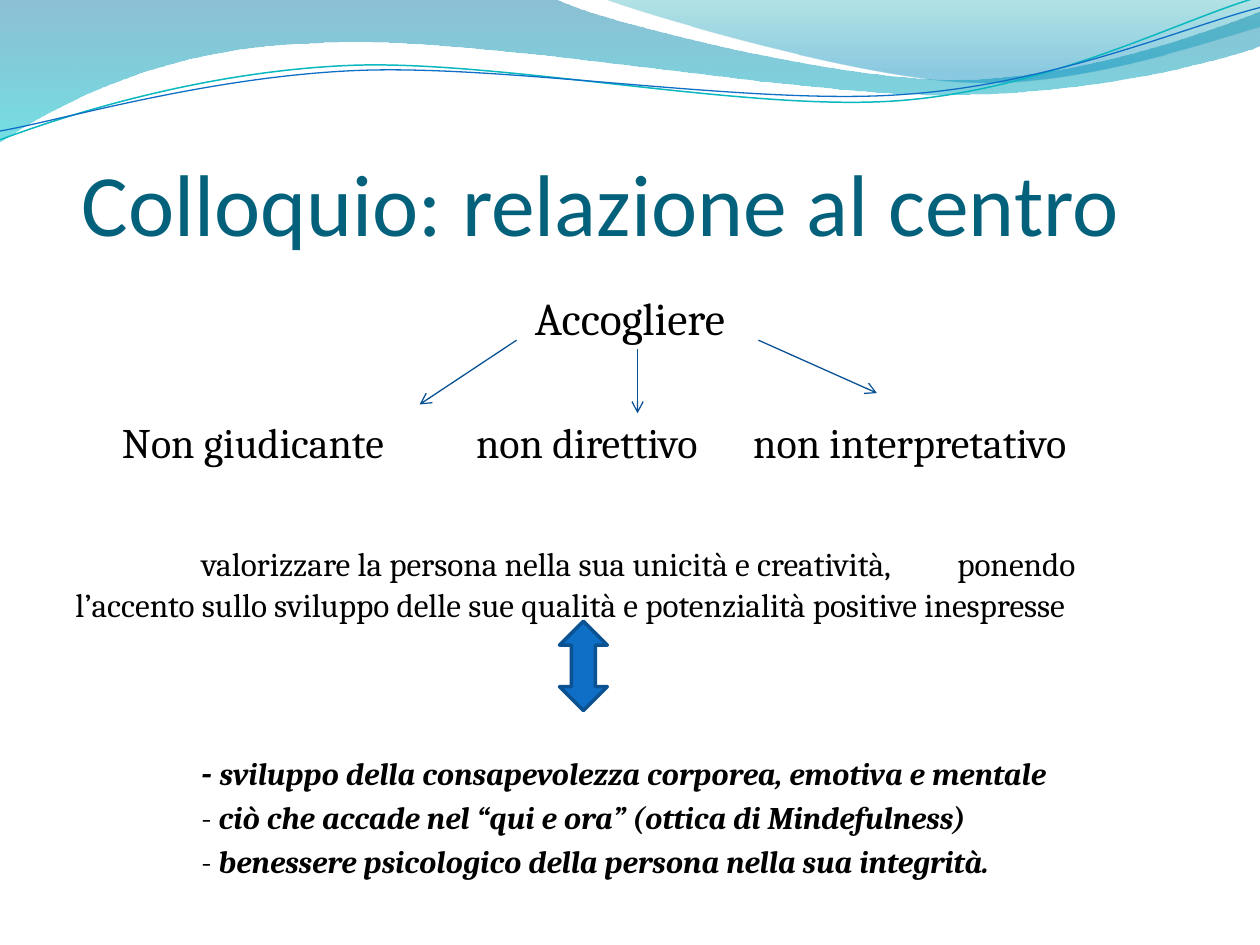
from lxml import etree
from pptx import Presentation
from pptx.dml.color import RGBColor
from pptx.enum.shapes import MSO_CONNECTOR, MSO_SHAPE
from pptx.enum.text import MSO_ANCHOR, MSO_AUTO_SIZE, PP_ALIGN
from pptx.oxml.ns import qn
from pptx.util import Inches, Pt

STRAIGHT, UP_DOWN = MSO_CONNECTOR.STRAIGHT, MSO_SHAPE.UP_DOWN_ARROW
BOTTOM, NO_FIT = MSO_ANCHOR.BOTTOM, MSO_AUTO_SIZE.NONE
LEFT, CENTER = PP_ALIGN.LEFT, PP_ALIGN.CENTER

BLACK = RGBColor(0x00, 0x00, 0x00)
TITLE_TEAL = RGBColor(0x04, 0x61, 0x7B)
BLUE = RGBColor(0x0F, 0x6F, 0xC6)
DARK_BLUE = RGBColor(0x0B, 0x52, 0x92)
ARROW_BLUE = RGBColor(0x09, 0x52, 0x95)
AQUA = RGBColor(0x0A, 0xB8, 0xBF)
DEEP_TEAL, CYAN = RGBColor(0x00, 0x74, 0xA1), RGBColor(0x00, 0xC6, 0xCF)
SEA, SKY = RGBColor(0x00, 0xA1, 0xA9), RGBColor(0x00, 0x8B, 0xBF)

# Content
TITLE = "Colloquio: relazione al centro"
# space before (pt), line spacing, alignment, tab stops (in), runs (text, size, bold italic)
BODY = [
    (0, 1, CENTER, [], [("Accogliere", 26, False)]),
    (41.2, 1, LEFT, [0.37, 3.18, 5.38],
     [("\tNon giudicante\tnon direttivo\tnon interpretativo", 24, False)]),
    (42.4, 1.05, LEFT, [1, 7],
     [("\tvalorizzare la persona nella sua unicità e creatività,\tponendo l’accento sullo "
       "sviluppo delle sue qualità e potenzialità positive inespresse", 19, False)]),
    (71.7, 1, LEFT, [1],
     [("\t- ", 20, True),
      ("sviluppo della consapevolezza corporea, emotiva e mentale", 18, True)]),
    (3.5, 1, LEFT, [1],
     [("\t- ", 18, False),
      ("ciò che accade nel “qui e ora” (ottica di Mindefulness)", 18, True)]),
    (3.5, 1, LEFT, [1],
     [("\t- ", 18, False),
      ("benessere psicologico della persona nella sua integrità.", 18, True)]),
]
ARROWS = [((6.02, 2.7), (6.96, 3.12)), ((4.1, 2.7), (3.33, 3.21)), ((5.06, 2.77), (5.06, 3.28))]

# Waves: a start point, then straight steps (2 numbers) and Bézier steps (6 numbers)
BANDS = [
    ([(0, 0), (4.4, -0.01), (4.76, 0.17, 6.64, 0.63, 7.58, 0.63),
      (8.53, 0.63, 9.58, 0.26, 10, 0.09), (10.01, 0.36),
      (9.83, 0.44, 8.7, 0.76, 7.46, 0.75), (6.22, 0.75, 3.82, 0.28, 2.57, 0.34),
      (1.29, 0.36, 0.46, 0.83, -0.01, 1.13)], [(DEEP_TEAL, 45), (CYAN, 55)], 1),
    ([(4.79, -0.01), (5.09, 0.11, 6.82, 0.62, 7.69, 0.65),
      (8.56, 0.69, 9.61, 0.32, 10, 0.21), (10, 0)], [(SEA, 30), (SKY, 45)], 0.8),
]
STRANDS = [
    ([(0, 1.11), (0.48, 0.93, 1.58, 0.57, 2.77, 0.52), (3.95, 0.47, 5.93, 0.89, 7.13, 0.8),
      (8.33, 0.71, 9.38, 0.15, 9.98, -0.02)], AQUA, 0.85),
    ([(0, 1.04), (0.47, 0.96, 1.64, 0.61, 2.83, 0.56), (4.03, 0.51, 5.97, 0.84, 7.17, 0.75),
      (8.36, 0.67, 9.41, 0.21, 10, 0.06)], BLUE, 0.75),
]


def add_wave(shapes, steps, close):
    """Build an outline through all points, then bend each Bézier step into a curve."""
    points = [(Inches(x), Inches(y))
              for step in steps for x, y in zip(step[::2], step[1::2])]
    builder = shapes.build_freeform(*points[0])
    builder.add_line_segments(points[1:], close=close)
    s = builder.convert_to_shape()
    s.shadow.inherit = False
    segments = iter(list(s._element.spPr.iter(qn("a:lnTo"))))
    for step in steps[1:]:
        group = [next(segments) for _ in range(len(step) // 2)]
        if len(group) == 3:
            curve = etree.Element(qn("a:cubicBezTo"))
            group[0].addprevious(curve)
            for segment in group:
                curve.append(segment[0])
                segment.getparent().remove(segment)
    return s


def add_run(p, text, font, size, color, emphasis=False):
    r = p.add_run()
    r.text = text
    r.font.name, r.font.size = font, Pt(size)
    r.font.color.rgb = color
    r.font.bold = r.font.italic = emphasis


def set_tabs(p, tabs):
    tab_list = etree.SubElement(p._p.get_or_add_pPr(), qn("a:tabLst"))
    for tab in tabs:
        etree.SubElement(tab_list, qn("a:tab"), pos=str(Inches(tab)), algn="l")


prs = Presentation()
prs.slide_width, prs.slide_height = Inches(10), Inches(7.5)
slide = prs.slides.add_slide(prs.slide_layouts[5])
shapes = slide.shapes

# Wave bands and strands across the top
for steps, stops, end in BANDS:
    s = add_wave(shapes, steps, True)
    s.line.fill.background()
    s.fill.gradient()
    s.fill.gradient_angle = 270
    for stop, (color, alpha), position in zip(s.fill.gradient_stops, stops, (0, end)):
        stop.color.rgb = color
        stop.position = position
    for node, (_, alpha) in zip(s._element.spPr.iter(qn("a:srgbClr")), stops):
        etree.SubElement(node, qn("a:alpha"), val=str(alpha * 1000))
for steps, color, width in STRANDS:
    s = add_wave(shapes, steps, False)
    s.fill.background()
    s.line.color.rgb = color
    s.line.width = Pt(width)

# Title
title = shapes.title
title.left, title.top, title.width, title.height = map(Inches, (0.5, 0.77, 9, 1.25))
tf = title.text_frame
tf.auto_size, tf.vertical_anchor = NO_FIT, BOTTOM
tf.margin_left, tf.margin_right = Inches(0.15), 0
tf.margin_top, tf.margin_bottom = Inches(0.05), 0
tf.paragraphs[0].alignment = LEFT
add_run(tf.paragraphs[0], TITLE, "Calibri", 50, TITLE_TEAL)

# Body text
tf = shapes.add_textbox(*map(Inches, (0.5, 2.25, 9, 4.66))).text_frame
tf.word_wrap = True
for i, (before, spacing, align, tabs, runs) in enumerate(BODY):
    p = tf.add_paragraph() if i else tf.paragraphs[0]
    p.alignment, p.space_before, p.line_spacing = align, Pt(before), spacing
    if tabs:
        set_tabs(p, tabs)
    for text, size, emphasis in runs:
        add_run(p, text, "Cambria", size, BLACK, emphasis)

# Arrows from the heading to its three qualities
for start, end in ARROWS:
    s = shapes.add_connector(STRAIGHT, *map(Inches, start + end))
    s.line.color.rgb = ARROW_BLUE
    s.line.width = Pt(0.75)
    etree.SubElement(s.line._get_or_add_ln(), qn("a:tailEnd"), type="arrow")
    etree.SubElement(s._element.spPr, qn("a:effectLst"))

# Double arrow
s = shapes.add_shape(UP_DOWN, *map(Inches, (4.44, 4.93, 0.38, 0.71)))
s.shadow.inherit = False
s.fill.solid()
s.fill.fore_color.rgb = BLUE
s.line.color.rgb = DARK_BLUE
s.line.width = Pt(2)

prs.save("out.pptx")
